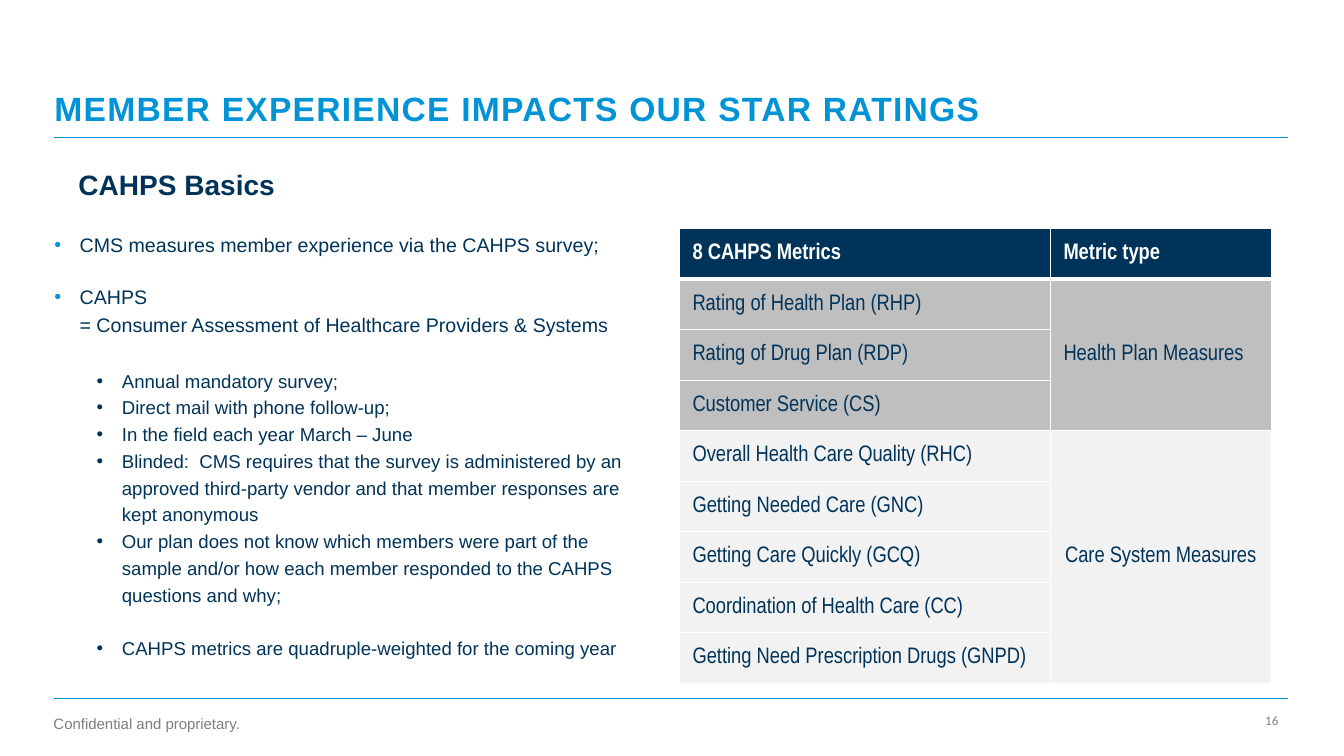
from lxml import etree
from pptx import Presentation
from pptx import util as u
from pptx.dml.color import RGBColor
from pptx.enum import shapes, text
from pptx.oxml.ns import qn

Pt = u.Pt
BLUE = RGBColor(0x00, 0x94, 0xD7)
NAVY = RGBColor(0x00, 0x33, 0x59)
WHITE = RGBColor(0xFF, 0xFF, 0xFF)
FOOTER_GRAY = RGBColor(0x7F, 0x7F, 0x7F)
PLAN_GRAY = RGBColor(0xBF, 0xBF, 0xBF)
CARE_GRAY = RGBColor(0xF2, 0xF2, 0xF2)
LEFT, LINE_WIDTH = 38.9, 881.3


def add_run(paragraph, words, size, color, font="Arial", bold=False):
    run = paragraph.add_run()
    run.text = words
    run.font.size = Pt(size)
    run.font.name = font
    run.font.bold = bold
    run.font.color.rgb = color
    return run


def add_text_box(left, top, width, height, anchor, margins=(0, 0), wrap=True):
    box = slide.shapes.add_textbox(Pt(left), Pt(top), Pt(width), Pt(height))
    frame = box.text_frame
    frame.word_wrap = wrap
    frame.vertical_anchor = anchor
    frame.margin_left = frame.margin_right = Pt(margins[0])
    frame.margin_top = frame.margin_bottom = Pt(margins[1])
    return frame


presentation = Presentation()
presentation.slide_width = Pt(960)
presentation.slide_height = Pt(540)
slide = presentation.slides.add_slide(presentation.slide_layouts[5])

# Title
title = slide.shapes.title
title.left, title.top, title.width, title.height = Pt(LEFT), Pt(11.5), Pt(732.2), Pt(80.6)
frame = title.text_frame
frame.auto_size = text.MSO_AUTO_SIZE.NONE
frame.word_wrap = True
frame.vertical_anchor = text.MSO_ANCHOR.BOTTOM
frame.margin_left = frame.margin_right = frame.margin_top = frame.margin_bottom = 0
paragraph = frame.paragraphs[0]
paragraph.alignment = text.PP_ALIGN.LEFT
paragraph.line_spacing = 0.9
run = add_run(paragraph, "MEMBER EXPERIENCE IMPACTS OUR STAR RATINGS", 24, BLUE, bold=True)
run.font._element.set("spc", "90")

# Rules below the title and above the footer
for y in (97.9, 499):
    rule = slide.shapes.add_connector(
        shapes.MSO_CONNECTOR.STRAIGHT, Pt(LEFT), Pt(y), Pt(LEFT + LINE_WIDTH), Pt(y))
    rule.line.color.rgb = BLUE
    rule.line.width = Pt(0.75)
    etree.SubElement(rule._element.spPr, qn("a:effectLst"))

# Footer and slide number
frame = add_text_box(38.2, 508.3, 157, 15.1, text.MSO_ANCHOR.BOTTOM)
add_run(frame.paragraphs[0], "Confidential and proprietary.", 10.7, FOOTER_GRAY)
frame = add_text_box(696.2, 509, 224, 14.4, text.MSO_ANCHOR.BOTTOM, (7.2, 3.6))
frame.paragraphs[0].alignment = text.PP_ALIGN.RIGHT
add_run(frame.paragraphs[0], "16", 9.3, FOOTER_GRAY, "Calibri")

# Subheading
frame = add_text_box(49, 115.9, 379.4, 46.8, text.MSO_ANCHOR.TOP, (7.2, 3.6), wrap=False)
add_run(frame.paragraphs[0], "CAHPS Basics", 20, NAVY, bold=True)

# Bullets: level, space after, lines
bullets = [
    (0, 17, ["CMS measures member experience via the CAHPS survey;"]),
    (0, 20.5, ["CAHPS", "= Consumer Assessment of Healthcare Providers & Systems"]),
    (1, 0, ["Annual mandatory survey;"]),
    (1, 0, ["Direct mail with phone follow-up;"]),
    (1, 0, ["In the field each year March – June"]),
    (1, 0, ["Blinded:  CMS requires that the survey is administered by an approved "
            "third-party vendor and that member responses are kept anonymous"]),
    (1, 19, ["Our plan does not know which members were part of the sample and/or how "
             "each member responded to the CAHPS questions and why;"]),
    (1, 0, ["CAHPS metrics are quadruple-weighted for the coming year"]),
]
LEVELS = [(18, 14, BLUE), (48.2, 13.3, NAVY)]  # indent, size, bullet colour
frame = add_text_box(LEFT, 162.7, 407.5, 337, text.MSO_ANCHOR.TOP)
for index, (level, space_after, lines) in enumerate(bullets):
    paragraph = frame.add_paragraph() if index else frame.paragraphs[0]
    indent, size, bullet_color = LEVELS[level]
    properties = paragraph._p.get_or_add_pPr()
    properties.set("marL", str(Pt(indent)))
    properties.set("indent", str(-Pt(18)))
    color = etree.SubElement(properties, qn("a:buClr"))
    etree.SubElement(color, qn("a:srgbClr"), val=str(bullet_color))
    etree.SubElement(properties, qn("a:buFont"), typeface="Arial")
    etree.SubElement(properties, qn("a:buChar"), char="•")
    paragraph.level = level
    paragraph.line_spacing = 1.2
    paragraph.space_before = Pt(0)
    paragraph.space_after = Pt(space_after)
    for number, line in enumerate(lines):
        if number:
            paragraph.add_line_break()
        add_run(paragraph, line, size, NAVY)

# Metrics table
rows = [
    ("8 CAHPS Metrics", "Metric type"),
    ("Rating of Health Plan (RHP)", "Health Plan Measures"),
    ("Rating of Drug Plan (RDP)", ""),
    ("Customer Service (CS)", ""),
    ("Overall Health Care Quality (RHC)", "Care System Measures"),
    ("Getting Needed Care (GNC)", ""),
    ("Getting Care Quickly (GCQ)", ""),
    ("Coordination of Health Care (CC)", ""),
    ("Getting Need Prescription Drugs (GNPD)", ""),
]
ROW_HEIGHT = 36.1
table = slide.shapes.add_table(
    len(rows), 2, Pt(485.3), Pt(163.4), Pt(422.7), Pt(ROW_HEIGHT * len(rows))).table
table.columns[0].width, table.columns[1].width = Pt(265), Pt(157.7)
for row_index, row in enumerate(rows):
    table.rows[row_index].height = Pt(ROW_HEIGHT)
    header = row_index == 0
    fill = NAVY if header else PLAN_GRAY if row_index < 4 else CARE_GRAY
    for column_index, words in enumerate(row):
        cell = table.cell(row_index, column_index)
        cell.vertical_anchor = text.MSO_ANCHOR.MIDDLE
        cell.margin_left = cell.margin_right = Pt(9.4)
        cell.margin_top = cell.margin_bottom = Pt(4.7)
        if words:
            add_run(cell.text_frame.paragraphs[0], words, 16,
                    WHITE if header else NAVY, "Arial Narrow", header)
        cell_properties = cell._tc.get_or_add_tcPr()
        for side in ("lnL", "lnR", "lnT", "lnB"):
            width = 3 if header and side == "lnB" else 1
            border = etree.SubElement(cell_properties, qn("a:" + side), w=str(Pt(width)))
            border_fill = etree.SubElement(border, qn("a:solidFill"))
            etree.SubElement(border_fill, qn("a:srgbClr"), val=str(WHITE))
        cell.fill.solid()
        cell.fill.fore_color.rgb = fill
table.cell(1, 1).merge(table.cell(3, 1))
table.cell(4, 1).merge(table.cell(8, 1))
table.cell(4, 1).text_frame.paragraphs[0].alignment = text.PP_ALIGN.CENTER

presentation.save("out.pptx")
